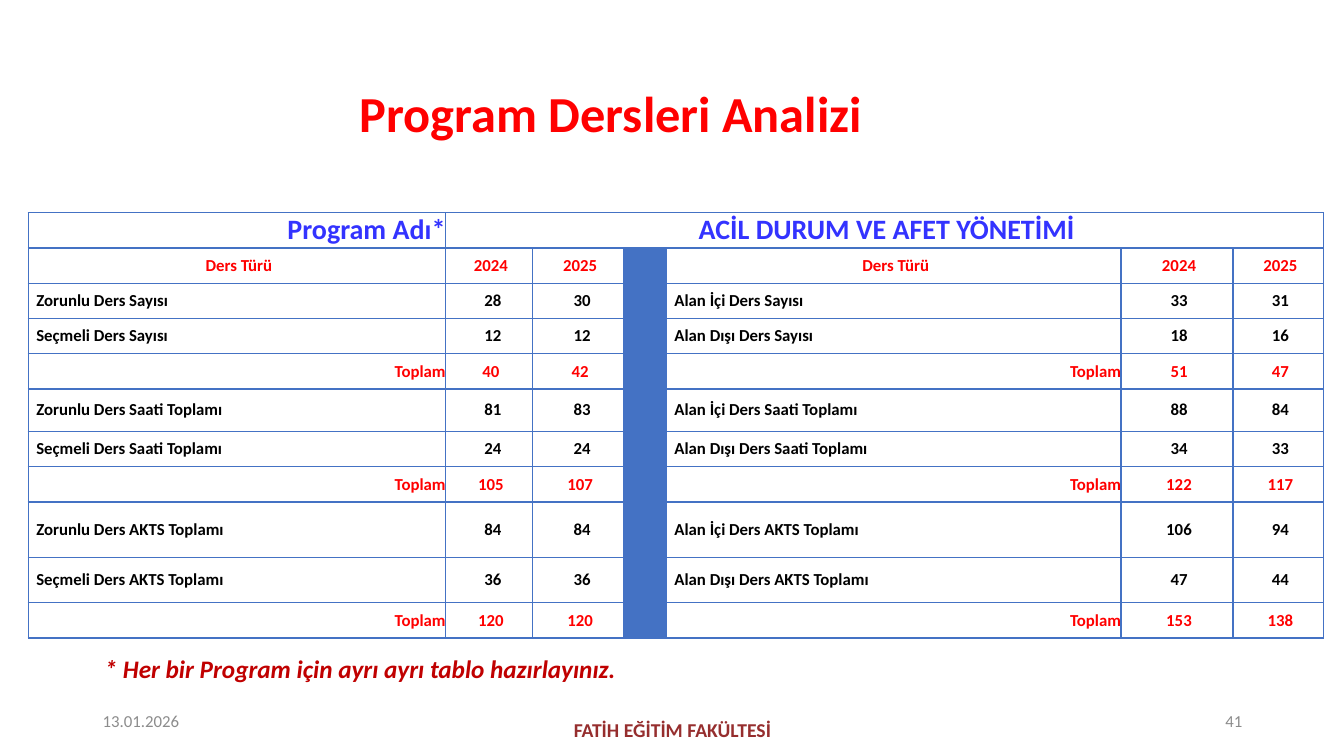
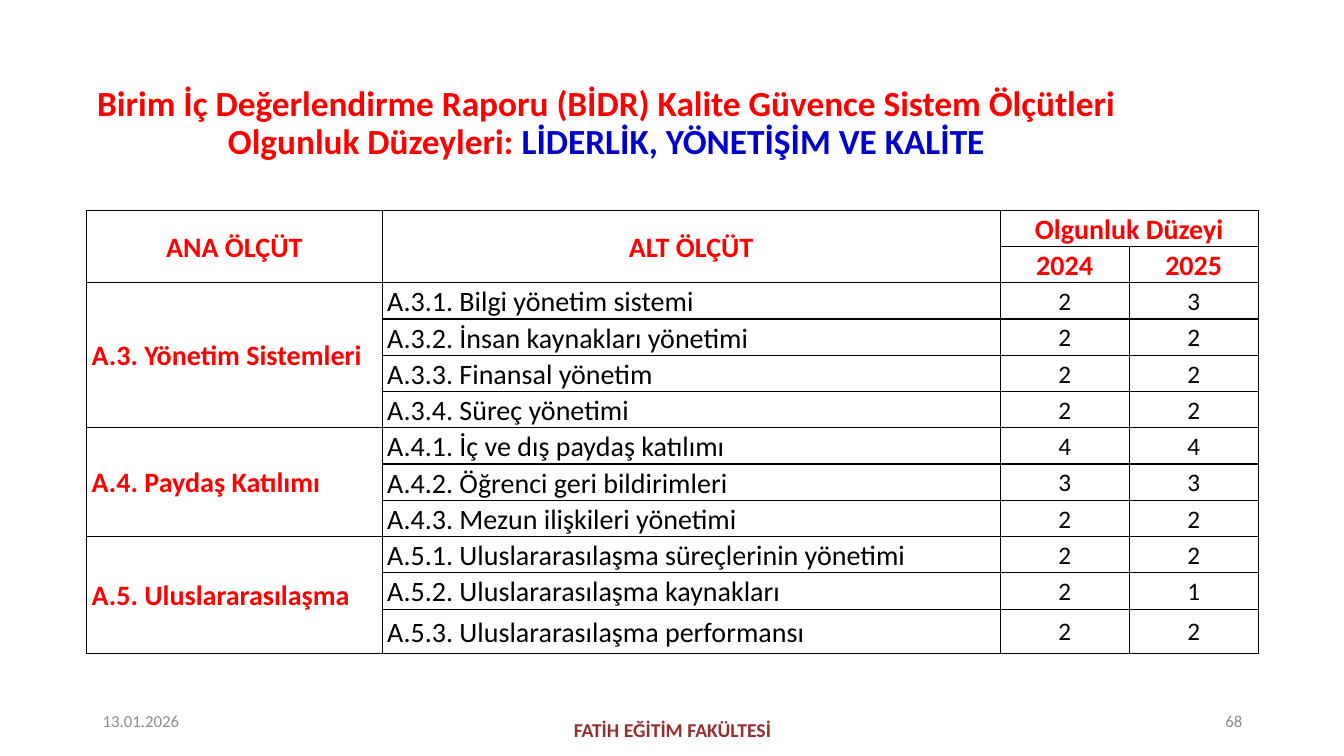
import pptx
import pptx.util
import pptx.dml.color
import pptx.enum.text
import lxml.etree

ALIGN = pptx.enum.text.PP_ALIGN
ANCHOR = pptx.enum.text.MSO_ANCHOR
NS = "http://schemas.openxmlformats.org/drawingml/2006/main"
SCALE = 9144  # 100 px to the inch

RED, BLACK, GREY = "FF0000", "000000", "8C8C8C"
BLUE, VIOLET, NAVY = "4472C4", "3333FF", "0000CC"
MAROON, CRIMSON = "962E2E", "C00000"


def px(num):
    return pptx.util.Emu(num * SCALE)


def rgb(code):
    return pptx.dml.color.RGBColor.from_string(code)


class Deck:
    font = "Calibri"

    def __init__(self):
        self.prs = pptx.Presentation()
        self.prs.slide_width, self.prs.slide_height = px(1333), px(750)
        self.slide = None

    def page(self, num):
        """Start a slide with its footers."""
        self.slide = self.prs.slides.add_slide(self.prs.slide_layouts[6])
        self.text((442, 704, 450, 40), [("FATİH EĞİTİM FAKÜLTESİ", MAROON)],
                  14, ALIGN.CENTER, bold=True)
        self.text((92, 695, 300, 40), [("13.01.2026", GREY)], 12)
        self.text((942, 695, 300, 40), [(num, GREY)], 12, ALIGN.RIGHT)

    def words(self, frame, runs, size, align, bold=False, italic=False, lead=None):
        """Fill a frame with one paragraph of (text, colour) runs."""
        para = frame.paragraphs[0]
        para.text = runs[0][0]
        for part, _ in runs[1:]:
            para.add_run().text = part
        para.alignment = align
        if lead:
            para.line_spacing = lead
        for run, (_, color) in zip(para.runs, runs):
            font = run.font
            font.name, font.size = self.font, pptx.util.Pt(size)
            font.bold, font.italic = bold, italic
            font.color.rgb = rgb(color)

    def text(self, box, runs, size, align=ALIGN.LEFT, anchor=ANCHOR.MIDDLE, **style):
        frame = self.slide.shapes.add_textbox(*map(px, box)).text_frame
        frame.word_wrap = True
        frame.vertical_anchor = anchor
        self.words(frame, runs, size, align, **style)

    def title(self, box, runs, size):
        self.text(box, runs, size, ALIGN.CENTER, bold=True, lead=0.9)

    def table(self, left, top, cols, rows, line):
        """Add an empty table with plain cells and even borders."""
        grid = self.slide.shapes.add_table(
            len(rows), len(cols), px(left), px(top), px(sum(cols)), px(sum(rows))).table
        grid.first_row = grid.horz_banding = False
        for col, wide in zip(grid.columns, cols):
            col.width = px(wide)
        for row, high in zip(grid.rows, rows):
            row.height = px(high)
        for cell in grid.iter_cells():
            self.border(cell, line)
            cell.fill.background()
            cell.margin_left = cell.margin_right = 0
            cell.margin_top = cell.margin_bottom = 0
        return grid

    def border(self, cell, color):
        props = cell._tc.get_or_add_tcPr()
        for side in ("lnL", "lnR", "lnT", "lnB"):
            edge = lxml.etree.SubElement(props, f"{{{NS}}}{side}", w="12700")
            fill = lxml.etree.SubElement(edge, f"{{{NS}}}solidFill")
            lxml.etree.SubElement(fill, f"{{{NS}}}srgbClr", val=color)

    def cell(self, cell, label, color, size, align=ALIGN.CENTER,
             left=0, right=0, **style):
        cell.margin_left, cell.margin_right = px(left), px(right)
        cell.vertical_anchor = ANCHOR.MIDDLE
        self.words(cell.text_frame, [(label, color)], size, align, **style)


def courses(deck):
    deck.page("41")
    deck.title((41, 82, 1130, 67), [("Program Dersleri Analizi", RED)], 36)

    head, total = "Ders Türü", "Toplam"
    data = [
        (head, "2024", "2025", head, "2024", "2025"),
        ("Zorunlu Ders Sayısı", "28", "30", "Alan İçi Ders Sayısı", "33", "31"),
        ("Seçmeli Ders Sayısı", "12", "12", "Alan Dışı Ders Sayısı", "18", "16"),
        (total, "40", "42", total, "51", "47"),
        ("Zorunlu Ders Saati Toplamı", "81", "83", "Alan İçi Ders Saati Toplamı", "88", "84"),
        ("Seçmeli Ders Saati Toplamı", "24", "24", "Alan Dışı Ders Saati Toplamı", "34", "33"),
        (total, "105", "107", total, "122", "117"),
        ("Zorunlu Ders AKTS Toplamı", "84", "84", "Alan İçi Ders AKTS Toplamı", "106", "94"),
        ("Seçmeli Ders AKTS Toplamı", "36", "36", "Alan Dışı Ders AKTS Toplamı", "47", "44"),
        (total, "120", "120", total, "153", "138"),
    ]
    grid = deck.table(28, 211, [414, 86, 91, 42, 451, 111, 90],
                      [35] * 5 + [42, 35, 35, 55, 45, 35], BLUE)

    # Programme name
    grid.cell(0, 1).merge(grid.cell(0, 6))
    deck.cell(grid.cell(0, 0), "Program Adı*", VIOLET, 20, ALIGN.RIGHT, bold=True)
    deck.cell(grid.cell(0, 1), "ACİL DURUM VE AFET YÖNETİMİ", VIOLET, 20,
              left=4, bold=True)

    # Course counts on both sides of the blue band
    for row, items in enumerate(data, 1):
        band = grid.cell(row, 3)
        band.fill.solid()
        band.fill.fore_color.rgb = rgb(BLUE)
        plain = items[0] not in (head, total)
        for col, label in zip((0, 1, 2, 4, 5, 6), items):
            align = ALIGN.CENTER
            if label == total:
                align = ALIGN.RIGHT
            elif plain and col in (0, 4):
                align = ALIGN.LEFT
            deck.cell(grid.cell(row, col), label, BLACK if plain else RED, 12, align,
                      left=8 if plain and col < 5 else 4, bold=True)

    deck.text((94, 643, 766, 40),
              [("* Her bir Program için ayrı ayrı tablo hazırlayınız.", CRIMSON)],
              18, anchor=ANCHOR.TOP, bold=True, italic=True)


def levels(deck):
    deck.page("68")
    deck.title((36, 85, 1131, 77), [
        ("Birim İç Değerlendirme Raporu (BİDR) Kalite Güvence Sistem Ölçütleri "
         "Olgunluk Düzeyleri: ", RED),
        ("LİDERLİK, YÖNETİŞİM VE KALİTE", NAVY)], 25.2)

    groups = [
        ("A.3. Yönetim Sistemleri", [
            ("A.3.1. Bilgi yönetim sistemi", "2", "3"),
            ("A.3.2. İnsan kaynakları yönetimi", "2", "2"),
            ("A.3.3. Finansal yönetim", "2", "2"),
            ("A.3.4. Süreç yönetimi", "2", "2")]),
        ("A.4. Paydaş Katılımı", [
            ("A.4.1. İç ve dış paydaş katılımı", "4", "4"),
            ("A.4.2. Öğrenci geri bildirimleri", "3", "3"),
            ("A.4.3. Mezun ilişkileri yönetimi", "2", "2")]),
        ("A.5. Uluslararasılaşma", [
            ("A.5.1. Uluslararasılaşma süreçlerinin yönetimi", "2", "2"),
            ("A.5.2. Uluslararasılaşma kaynakları", "2", "1"),
            ("A.5.3. Uluslararasılaşma performansı", "2", "2")]),
    ]
    grid = deck.table(86, 209, [293, 613, 128, 128], [35] * 2 + [36] * 9 + [44], BLACK)

    def put(row, col, label, color, size=20, align=ALIGN.CENTER, bold=True):
        deck.cell(grid.cell(row, col), label, color, size, align,
                  left=5, right=5, bold=bold, lead=1.07)

    # Header
    for col in (0, 1):
        grid.cell(0, col).merge(grid.cell(1, col))
    grid.cell(0, 2).merge(grid.cell(0, 3))
    for row, col, label in ((0, 0, "ANA ÖLÇÜT"), (0, 1, "ALT ÖLÇÜT"),
                            (0, 2, "Olgunluk Düzeyi"), (1, 2, "2024"), (1, 3, "2025")):
        put(row, col, label, RED)

    # Criteria by group
    row = 2
    for name, items in groups:
        grid.cell(row, 0).merge(grid.cell(row + len(items) - 1, 0))
        put(row, 0, name, RED, align=ALIGN.JUSTIFY)
        for label, *marks in items:
            put(row, 1, label, BLACK, align=ALIGN.JUSTIFY, bold=False)
            for col, mark in enumerate(marks, 2):
                put(row, col, mark, BLACK, 18, bold=False)
            row += 1


def main():
    deck = Deck()
    courses(deck)
    levels(deck)
    deck.prs.save("out.pptx")


if __name__ == "__main__":
    main()
